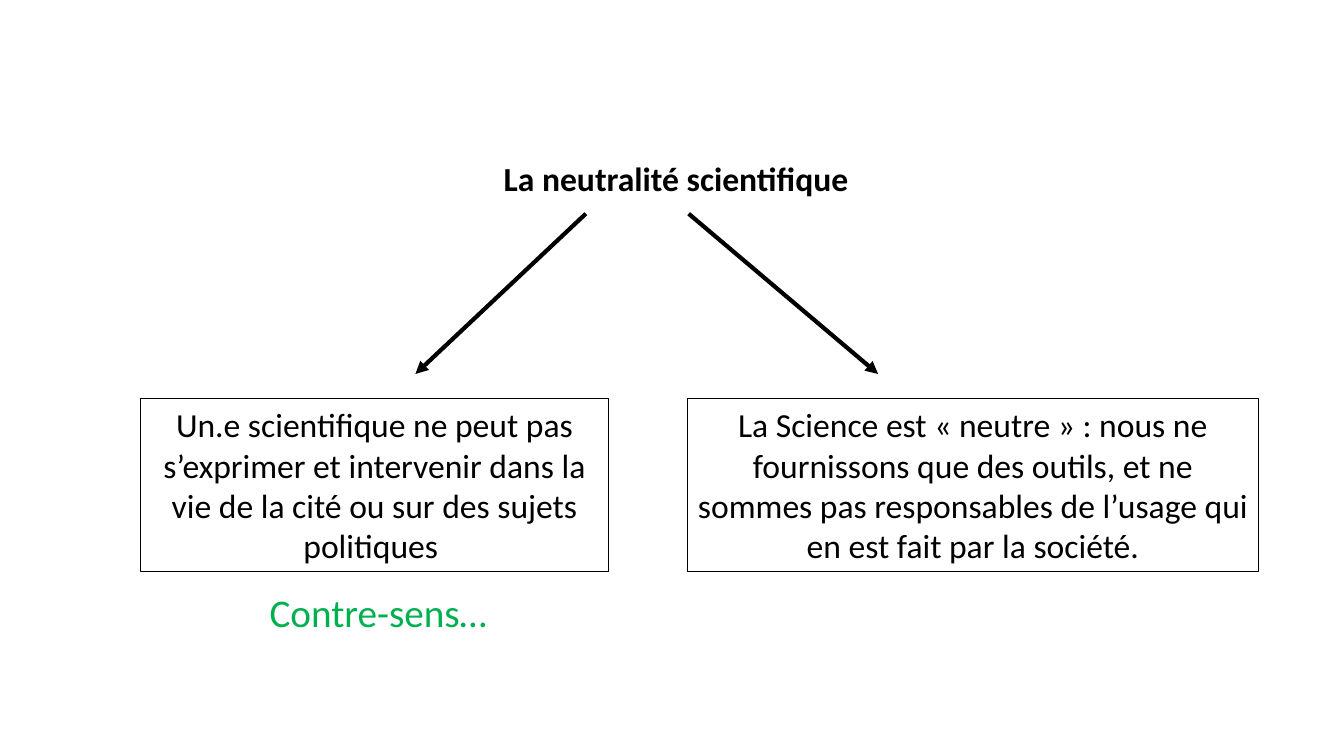
from lxml.etree import SubElement
from pptx import Presentation
from pptx.dml.color import RGBColor
from pptx.enum.shapes import MSO_CONNECTOR, MSO_SHAPE
from pptx.enum.text import PP_ALIGN
from pptx.oxml.ns import qn
from pptx.util import Inches, Pt

BLACK = RGBColor(0x00, 0x00, 0x00)
GREEN = RGBColor(0x00, 0xB0, 0x50)

SLIDE_WIDTH = Inches(13.33)
SLIDE_HEIGHT = Inches(7.5)

BODY = {"name": "Calibri", "size": Pt(24), "bold": False}
HEADING = {**BODY, "bold": True}
REMARK = {**BODY, "size": Pt(28)}

ARROW_TOP, ARROW_BOTTOM = 28.27, 49.47
CLAIM_TOP, CLAIM_HEIGHT = 52.67, 22.93

BRANCHES = [
    {
        "arrow": (43.59, 30.91),
        "claim": (10.43, 34.88),
        "text": "Un.e scientifique ne peut pas s’exprimer et intervenir "
                "dans la vie de la cité ou sur des sujets politiques ",
    },
    {
        "arrow": (51.24, 65.34),
        "claim": (51.16, 42.46),
        "text": "La Science est « neutre » : nous ne fournissons que des outils, "
                "et ne sommes pas responsables de l’usage qui en est fait "
                "par la société.",
    },
]


def across(percent):
    return round(SLIDE_WIDTH * percent / 100)


def down(percent):
    return round(SLIDE_HEIGHT * percent / 100)


def area(left, top, width, height):
    return across(left), down(top), across(width), down(height)


def write(holder, text, style, color):
    frame = holder.text_frame
    frame.word_wrap = True
    paragraph = frame.paragraphs[0]
    paragraph.alignment = PP_ALIGN.CENTER
    run = paragraph.add_run()
    run.text = text
    for attribute, value in style.items():
        setattr(run.font, attribute, value)
    run.font.color.rgb = color


def add_label(slide, place, text, style, color):
    write(slide.shapes.add_textbox(*area(*place)), text, style, color)


def add_claim(slide, left, width, text):
    claim = slide.shapes.add_shape(
        MSO_SHAPE.RECTANGLE, *area(left, CLAIM_TOP, width, CLAIM_HEIGHT))
    claim.shadow.inherit = False
    claim.fill.background()
    claim.line.color.rgb = BLACK
    claim.line.width = Pt(0.75)
    write(claim, text, BODY, BLACK)


def add_arrow(slide, start, end):
    arrow = slide.shapes.add_connector(
        MSO_CONNECTOR.STRAIGHT,
        across(start), down(ARROW_TOP), across(end), down(ARROW_BOTTOM))
    arrow.line.color.rgb = BLACK
    arrow.line.width = Pt(3)
    SubElement(arrow.line._get_or_add_ln(), qn("a:tailEnd"), type="triangle")
    SubElement(arrow._element.spPr, qn("a:effectLst"))


def main():
    presentation = Presentation()
    presentation.slide_width = SLIDE_WIDTH
    presentation.slide_height = SLIDE_HEIGHT
    slide = presentation.slides.add_slide(presentation.slide_layouts[6])

    add_label(slide, (28.96, 20.27, 42.69, 6.67),
              "La neutralité scientifique", HEADING, BLACK)
    for branch in BRANCHES:
        add_arrow(slide, *branch["arrow"])
    for branch in BRANCHES:
        add_claim(slide, *branch["claim"], branch["text"])
    add_label(slide, (17.78, 77.2, 21.38, 7.6), "Contre-sens… ", REMARK, GREEN)

    presentation.save("out.pptx")


if __name__ == "__main__":
    main()
